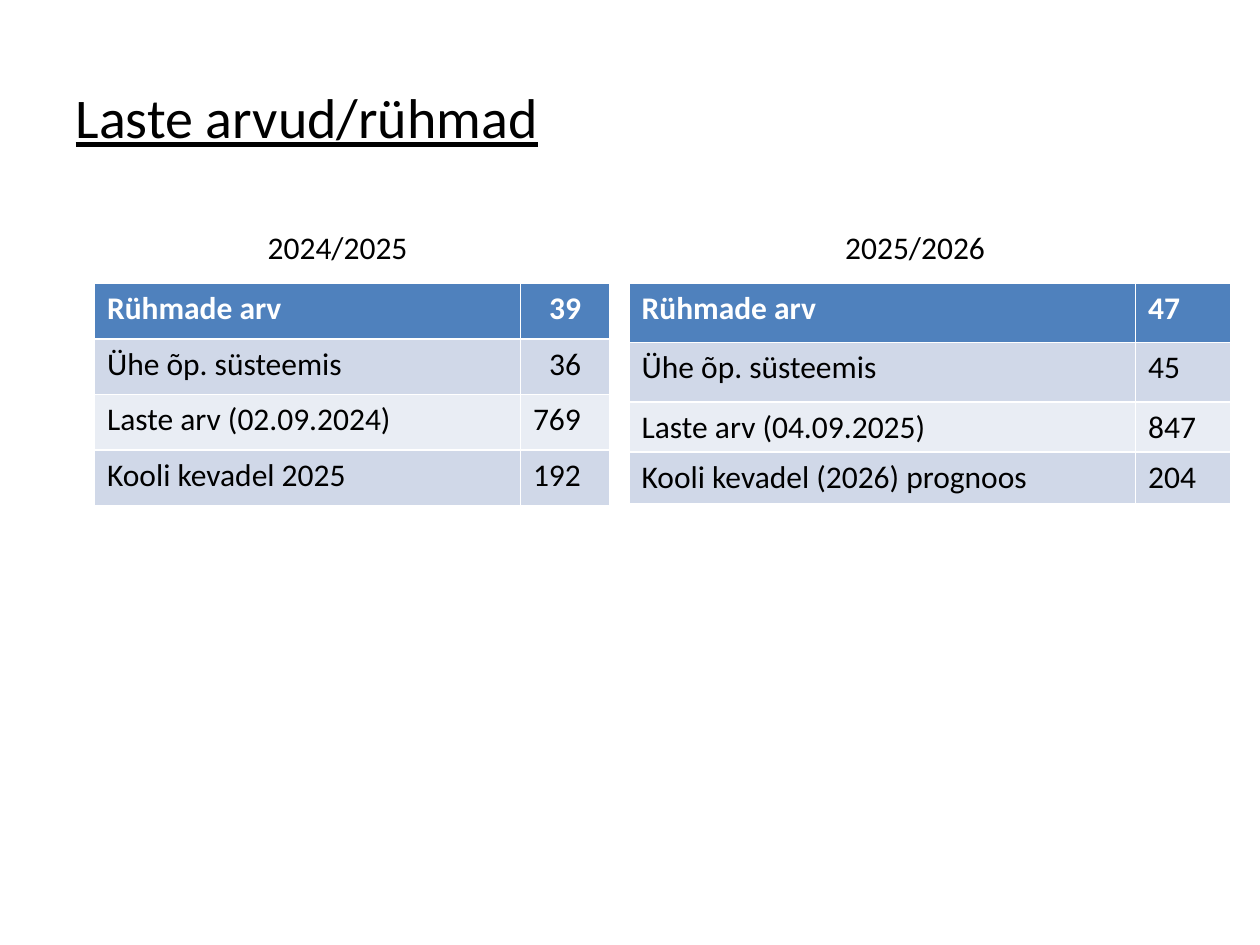
"""Build the slide comparing child and group counts of two school years."""
from pptx import Presentation
from pptx.dml.color import RGBColor
from pptx.enum.text import MSO_ANCHOR, PP_ALIGN
from pptx.util import Pt

BLACK = RGBColor(0x00, 0x00, 0x00)
WHITE = RGBColor(0xFF, 0xFF, 0xFF)
HEADER = RGBColor(0x4F, 0x81, 0xBD)
BANDS = [RGBColor(0xE9, 0xED, 0xF4), RGBColor(0xD0, 0xD8, 0xE8)]
LEFT, CENTER = PP_ALIGN.LEFT, PP_ALIGN.CENTER

TITLE = {"size": Pt(32), "underline": True}
HEADING = {"size": Pt(18)}
HEAD_CELL = {"size": Pt(18), "bold": True, "color": WHITE}
BODY_CELL = {"size": Pt(18), "bold": False}

YEARS = [
    {"year": "2024/2025", "heading_left": 34, "left": 54,
     "cols": [243.4, 51.1], "heights": [31.7] * 4, "centered": 2,
     "rows": [("Rühmade arv", "39"), ("Ühe õp. süsteemis", "36"),
              ("Laste arv (02.09.2024)", "769"), ("Kooli kevadel 2025", "192")]},
    {"year": "2025/2026", "heading_left": 364, "left": 359.5,
     "cols": [289.4, 54.7], "heights": [33.8, 33.8, 28.8, 29.2], "centered": 0,
     "rows": [("Rühmade arv", "47"), ("Ühe õp. süsteemis", "45"),
              ("Laste arv (04.09.2025)", "847"),
              ("Kooli kevadel (2026) prognoos", "204")]},
]


def write(tf, text, fmt, align=LEFT):
    p = tf.paragraphs[0]
    p.alignment = align
    r = p.add_run()
    r.text = text
    r.font.color.rgb = fmt.get("color", BLACK)
    for name, value in {"name": "Calibri", **fmt}.items():
        if name != "color":
            setattr(r.font, name, value)


prs = Presentation()
prs.slide_width, prs.slide_height = Pt(720), Pt(540)
s = prs.slides.add_slide(prs.slide_layouts[5])

title = s.shapes.title
title.left, title.top, title.width, title.height = Pt(36), Pt(21.6), Pt(648), Pt(90)
title.text_frame.vertical_anchor = MSO_ANCHOR.MIDDLE
write(title.text_frame, "Laste arvud/rühmad", TITLE)

for year in YEARS:
    box = s.shapes.add_textbox(Pt(year["heading_left"]), Pt(127), Pt(318), Pt(30))
    box.text_frame.word_wrap = True
    write(box.text_frame, year["year"], HEADING, CENTER)

for year in YEARS:
    rows, cols, heights = year["rows"], year["cols"], year["heights"]
    table = s.shapes.add_table(len(rows), len(cols), Pt(year["left"]), Pt(162),
                               Pt(sum(cols)), Pt(sum(heights))).table
    for column, width in zip(table.columns, cols):
        column.width = Pt(width)
    for i, (values, height) in enumerate(zip(rows, heights)):
        table.rows[i].height = Pt(height)
        for j, value in enumerate(values):
            cell = table.cell(i, j)
            cell.fill.solid()
            cell.fill.fore_color.rgb = BANDS[i % 2] if i else HEADER
            align = CENTER if j and i < year["centered"] else LEFT
            write(cell.text_frame, value, BODY_CELL if i else HEAD_CELL, align)

prs.save("out.pptx")
